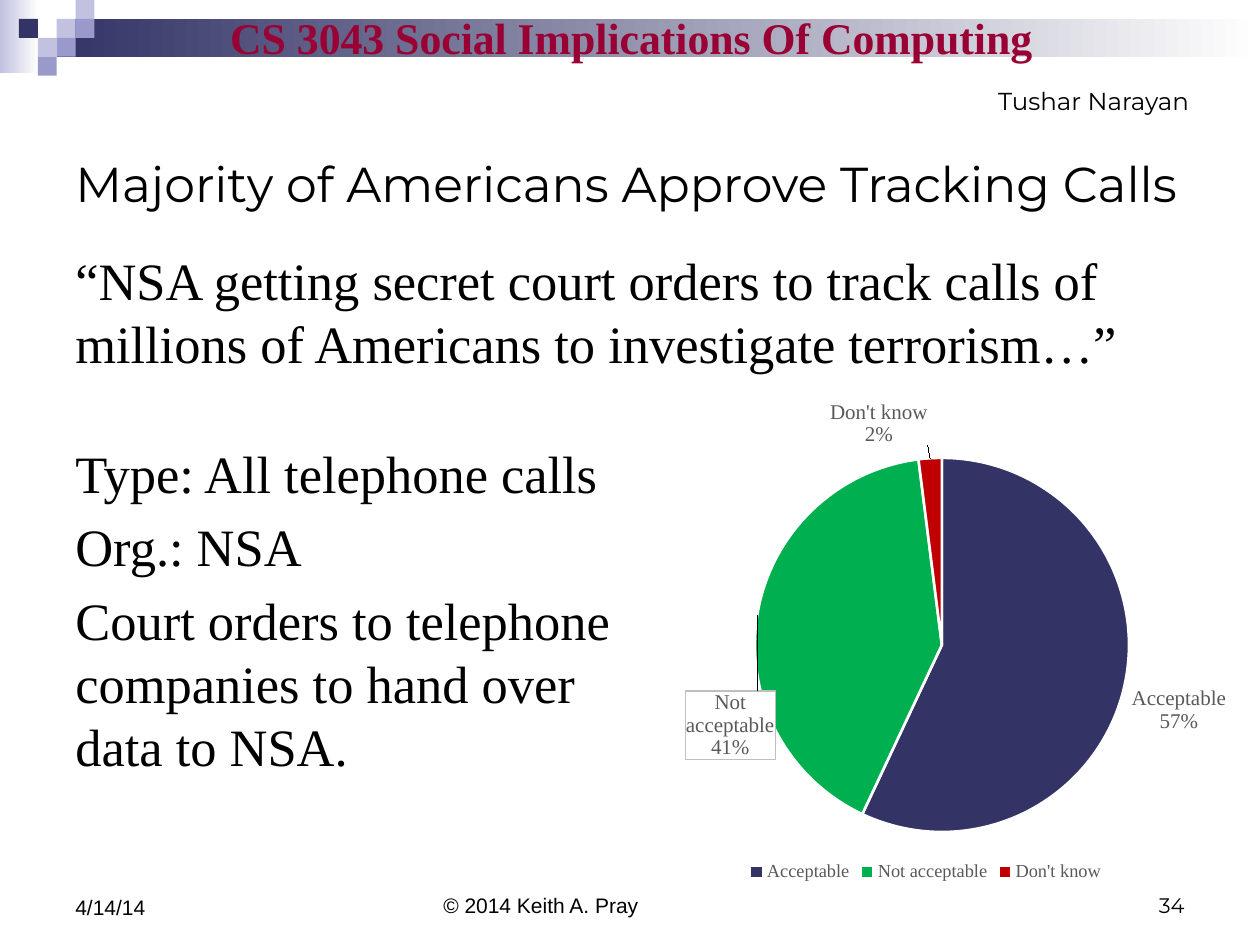
from pptx import Presentation
from pptx.chart.data import CategoryChartData
from pptx.dml.color import RGBColor
from pptx.enum.chart import XL_CHART_TYPE, XL_LABEL_POSITION, XL_LEGEND_POSITION
from pptx.enum.shapes import MSO_SHAPE
from pptx.enum.text import MSO_ANCHOR, PP_ALIGN
from pptx.oxml import parse_xml
from pptx.oxml.ns import nsdecls
from pptx.util import Inches, Pt

RECTANGLE = MSO_SHAPE.RECTANGLE
PIE = XL_CHART_TYPE.PIE
OUTSIDE_END = XL_LABEL_POSITION.OUTSIDE_END
LEGEND_BOTTOM = XL_LEGEND_POSITION.BOTTOM
TOP, MIDDLE, BOTTOM = MSO_ANCHOR.TOP, MSO_ANCHOR.MIDDLE, MSO_ANCHOR.BOTTOM
LEFT, CENTER, RIGHT = PP_ALIGN.LEFT, PP_ALIGN.CENTER, PP_ALIGN.RIGHT

NAVY = RGBColor(0x33, 0x33, 0x66)
LAVENDER = RGBColor(0x99, 0x99, 0xCC)
PALE = RGBColor(0xC2, 0xC2, 0xE0)
WHITE = RGBColor(0xFF, 0xFF, 0xFF)
BLACK = RGBColor(0, 0, 0)
CRIMSON = RGBColor(0x99, 0x00, 0x33)
GREEN = RGBColor(0x00, 0xB0, 0x50)
RED = RGBColor(0xC0, 0x00, 0x00)
GRAY = RGBColor(0x59, 0x59, 0x59)

SERIF, SANS, DISPLAY = "Times New Roman", "Arial", "Montserrat"

WIDTH, HEIGHT = 10, 7.5
MARGIN = WIDTH * 0.05
CONTENT = WIDTH - 2 * MARGIN
FOOTER_TOP = 6.83
TILE = 0.15  # side of one square of the header mosaic

# column, row, colour
MOSAIC = [
    (3, 1, PALE), (4, 0, PALE), (4, 1, LAVENDER), (2, 2, PALE),
    (1, 1, NAVY), (3, 2, LAVENDER), (2, 3, LAVENDER),
]

ANSWERS = [("Acceptable", 57, NAVY), ("Not acceptable", 41, GREEN), ("Don't know", 2, RED)]

LABEL_BOX = (
    '<c:spPr><a:solidFill><a:srgbClr val="FFFFFF"/></a:solidFill>'
    '<a:ln w="9525"><a:solidFill><a:srgbClr val="BFBFBF"/></a:solidFill></a:ln></c:spPr>'
)


def apply_format(target, **values):
    for name, value in values.items():
        setattr(target, name, value)


def set_font(font, size, name, color, bold=False):
    apply_format(font, size=Pt(size), name=name, bold=bold)
    font.color.rgb = color


def add_block(slide, left, top, width, height, color, fade=False):
    """Add a borderless rectangle; fade runs its colour to white at the right."""
    block = slide.shapes.add_shape(
        RECTANGLE, Inches(left), Inches(top), Inches(width), Inches(height))
    block.shadow.inherit = False
    block.line.fill.background()
    if fade:
        block.fill.gradient()
        block.fill.gradient_angle = 0
        for stop, position, shade in zip(block.fill.gradient_stops, (0, 1), (color, WHITE)):
            stop.position = position
            stop.color.rgb = shade
    else:
        block.fill.solid()
        block.fill.fore_color.rgb = color


def add_header_band(slide):
    add_block(slide, 0, 0, 0.31, 0.58, PALE, fade=True)
    add_block(slide, 3 * TILE, TILE, WIDTH - 3 * TILE, 2 * TILE, NAVY, fade=True)
    for column, row, color in MOSAIC:
        add_block(slide, column * TILE, row * TILE, TILE, TILE, color)


def add_text(slide, place, lines, size, font, color=BLACK, bold=False,
             align=LEFT, anchor=TOP, wrap=True, leading=None):
    """Add a text box; leading is the exact line height in points."""
    box = slide.shapes.add_textbox(*map(Inches, place))
    frame = box.text_frame
    apply_format(frame, word_wrap=wrap, vertical_anchor=anchor)
    for index, line in enumerate(lines):
        paragraph = frame.add_paragraph() if index else frame.paragraphs[0]
        paragraph.alignment = align
        if leading:
            paragraph.line_spacing = Pt(leading)
        if index:
            paragraph.space_before = Pt(size * 0.2)
        run = paragraph.add_run()
        run.text = line
        set_font(run.font, size, font, color, bold)


def manual_layout(x, y, extra=""):
    return (f'<c:layout {nsdecls("c")}><c:manualLayout>{extra}'
            f'<c:x val="{x}"/><c:y val="{y}"/>')


def shift_label(labels, index, dx, dy, box=""):
    """Move one pie label by shares of the chart's size."""
    labels_xml = labels._element
    labels_xml.insert(index - 1, parse_xml(
        f'<c:dLbl {nsdecls("c", "a")}><c:idx val="{index}"/>'
        f'{manual_layout(dx, dy)}</c:manualLayout></c:layout>{box}'
        '<c:dLblPos val="outEnd"/><c:showLegendKey val="0"/><c:showVal val="0"/>'
        '<c:showCatName val="1"/><c:showSerName val="0"/><c:showPercent val="1"/>'
        '<c:showBubbleSize val="0"/><c:separator>\n</c:separator></c:dLbl>'))


def place_plot(chart, x, y, width, height):
    plot_area = chart._chartSpace.chart.plotArea
    for old in plot_area.findall("{*}layout"):
        plot_area.remove(old)
    modes = ('<c:layoutTarget val="inner"/><c:xMode val="edge"/><c:yMode val="edge"/>')
    plot_area.insert(0, parse_xml(
        f'{manual_layout(x, y, modes)}<c:w val="{width}"/><c:h val="{height}"/>'
        '</c:manualLayout></c:layout>'))


def add_opinion_pie(slide, place):
    names, shares, colors = zip(*ANSWERS)
    data = CategoryChartData()
    data.categories = names
    data.add_series("Series 1", shares)
    chart = slide.shapes.add_chart(PIE, *map(Inches, place), data).chart
    apply_format(chart, has_title=False, has_legend=True)
    set_font(chart.font, 10, SERIF, BLACK)
    apply_format(chart.legend, position=LEGEND_BOTTOM, include_in_layout=False)
    set_font(chart.legend.font, 10.5, SERIF, GRAY)
    place_plot(chart, 0.23, 0.14, 0.59, 0.75)

    plot = chart.plots[0]
    plot.vary_by_categories = True
    series = plot.series[0]
    for index, color in enumerate(colors):
        wedge = series.points[index].format
        wedge.fill.solid()
        wedge.fill.fore_color.rgb = color
        wedge.line.color.rgb = WHITE
        wedge.line.width = Pt(1.5)

    labels = series.data_labels
    apply_format(labels, show_value=False, show_category_name=True,
                 show_percentage=True, position=OUTSIDE_END)
    set_font(labels.font, 12, SERIF, GRAY)
    shift_label(labels, 1, 0.04, 0.29, LABEL_BOX)
    shift_label(labels, 2, -0.08, -0.01)
    percent = labels._element.find("{*}showBubbleSize")
    if percent is None:
        percent = labels._element.find("{*}showPercent")
    percent.addnext(parse_xml(f'<c:separator {nsdecls("c")}>\n</c:separator>'))


def main():
    deck = Presentation()
    apply_format(deck, slide_width=Inches(WIDTH), slide_height=Inches(HEIGHT))
    slide = deck.slides.add_slide(deck.slide_layouts[6])

    add_header_band(slide)
    add_text(slide, (1.72, 0.03, 6.58, 0.52), ["CS 3043 Social Implications Of Computing"],
             25, SERIF, CRIMSON, bold=True, align=CENTER, anchor=MIDDLE, wrap=False)
    add_text(slide, (MARGIN, 0.83, CONTENT, 1.25),
             ["Majority of Americans Approve Tracking Calls"], 28, DISPLAY, anchor=MIDDLE)
    add_text(slide, (MARGIN, 1.92, CONTENT, 1.17),
             ["“NSA getting secret court orders to track calls of millions of Americans "
              "to investigate terrorism…”"], 30, SERIF, leading=36)
    add_text(slide, (7.49, 0.63, 2.38, 0.34), ["Tushar Narayan"], 14, DISPLAY, align=CENTER)

    add_opinion_pie(slide, (4.83, 3.08, 5.04, 3.96))
    add_text(slide, (MARGIN, 3.45, 4.83, 3.13),
             ["Type: All telephone calls", "Org.: NSA",
              "Court orders to telephone companies to hand over data to NSA."],
             30, SERIF, leading=36)

    add_text(slide, (3.42, FOOTER_TOP, 3.17, 0.5), ["© 2014 Keith A. Pray"],
             12, SANS, anchor=BOTTOM)
    add_text(slide, (MARGIN, FOOTER_TOP, 2.33, 0.52), ["4/14/14"], 12, SANS, anchor=BOTTOM)
    add_text(slide, (7.17, FOOTER_TOP, 2.33, 0.5), ["34"], 12, DISPLAY,
             align=RIGHT, anchor=BOTTOM)

    deck.save("out.pptx")


if __name__ == "__main__":
    main()
